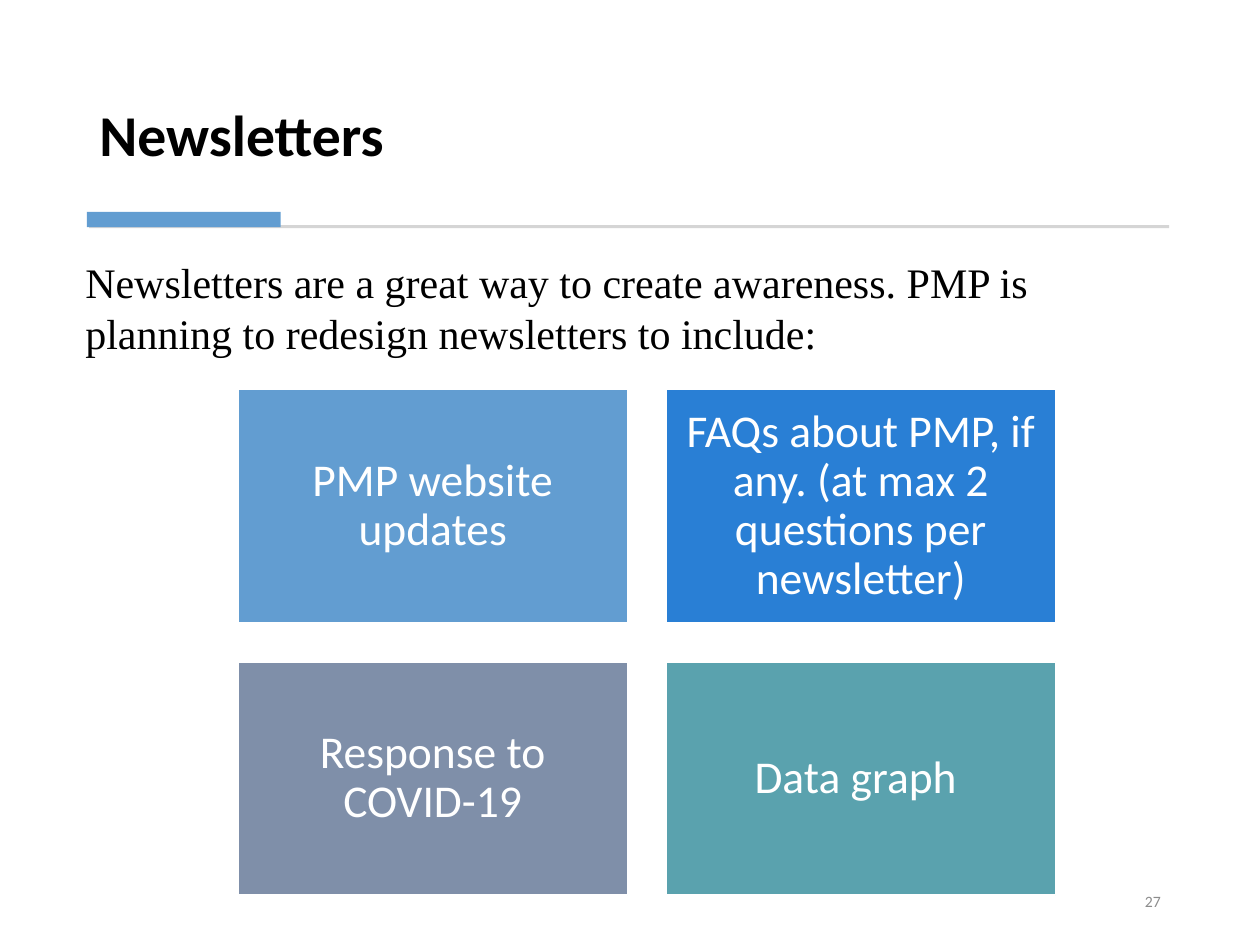
import pptx
import pptx.util
import pptx.dml.color
import pptx.enum.shapes
import pptx.enum.text
from pptx.util import Cm, Pt

RGB = pptx.dml.color.RGBColor.from_string
ALIGN = pptx.enum.text.PP_ALIGN
ANCHOR = pptx.enum.text.MSO_ANCHOR

COLORS = {
    "text": "000000",
    "white": "FFFFFF",
    "rule": "D5D5D5",
    "sky": "629DD1",
    "blue": "297FD5",
    "slate": "7F8FA9",
    "teal": "5AA2AE",
    "number": "8C8C8C",
}

deck = pptx.Presentation()
deck.slide_width, deck.slide_height = Cm(25.4), Cm(19.05)
slide = deck.slides.add_slide(deck.slide_layouts[5])


def add_block(left, top, width, height, color):
    block = slide.shapes.add_shape(
        pptx.enum.shapes.MSO_SHAPE.RECTANGLE, Cm(left), Cm(top), Cm(width), Cm(height)
    )
    block.shadow.inherit = False
    block.fill.solid()
    block.fill.fore_color.rgb = RGB(COLORS[color])
    block.line.fill.background()
    return block


def write(shape, text, font, size, color, align, anchor):
    frame = shape.text_frame
    frame.word_wrap = True
    frame.vertical_anchor = anchor
    paragraph = frame.paragraphs[0]
    paragraph.text = text
    paragraph.alignment = align
    paragraph.font.name = font
    paragraph.font.size = Pt(size)
    paragraph.font.color.rgb = RGB(COLORS[color])
    return paragraph


title = slide.shapes.title
title.left, title.top, title.width, title.height = Cm(1.75), Cm(0.71), Cm(21.9), Cm(2.82)
title.text_frame.auto_size = pptx.enum.text.MSO_AUTO_SIZE.NONE
heading = write(title, "Newsletters", "Calibri", 33, "text", ALIGN.LEFT, ANCHOR.BOTTOM)
heading.font.bold = True
heading.line_spacing = 0.9

add_block(1.8, 4.54, 21.77, 0.06, "rule")
add_block(1.75, 4.27, 3.91, 0.31, "sky")

# Topics fill a grid of two columns, row by row
topics = [
    ("PMP website updates", "sky"),
    ("FAQs about PMP, if any. (at max 2 questions per newsletter)", "blue"),
    ("Response to COVID-19", "slate"),
    ("Data graph ", "teal"),
]
card_width, card_height = 7.85, 4.71
column_step, row_step = 8.63, 5.49
for index, (topic, color) in enumerate(topics):
    row, column = divmod(index, 2)
    card = add_block(4.8 + column * column_step, 7.85 + row * row_step,
                     card_width, card_height, color)
    card.line.color.rgb = RGB(COLORS["white"])
    card.line.width = Pt(1)
    frame = card.text_frame
    frame.margin_left = frame.margin_right = Cm(0.28)
    frame.margin_top = frame.margin_bottom = Cm(0.28)
    label = write(card, topic, "Calibri", 26, "white", ALIGN.CENTER, ANCHOR.MIDDLE)
    label.line_spacing = 0.9

intro = slide.shapes.add_textbox(Cm(1.47), Cm(5.05), Cm(22.15), Cm(2.31))
write(intro,
      "Newsletters are a great way to create awareness. PMP is planning to "
      "redesign newsletters to include:",
      "Times New Roman", 24, "text", ALIGN.LEFT, ANCHOR.TOP)

page_number = slide.shapes.add_textbox(Cm(17.93), Cm(17.65), Cm(5.72), Cm(1.02))
write(page_number, "27", "Calibri", 9, "number", ALIGN.RIGHT, ANCHOR.MIDDLE)

deck.save("out.pptx")
